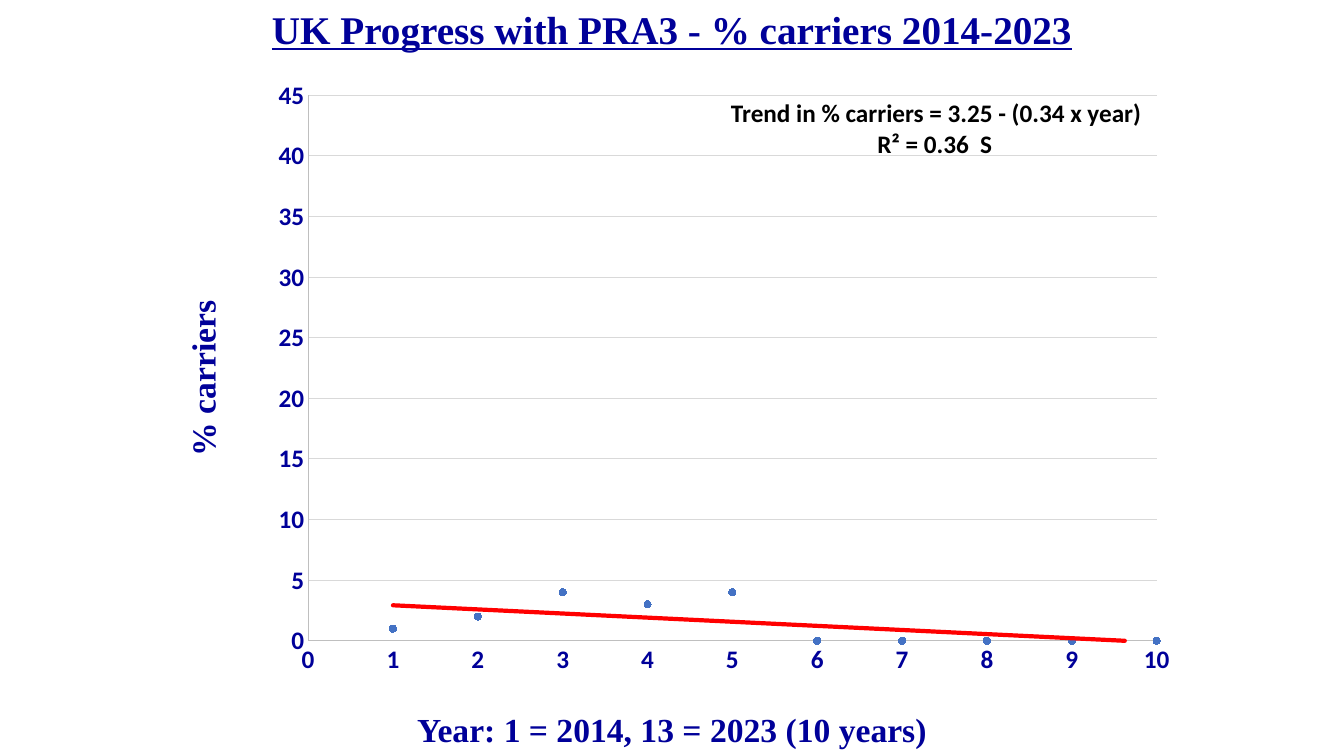
from dataclasses import dataclass

from lxml import etree
from pptx import Presentation
from pptx import util as u
from pptx.chart.data import XyChartData
from pptx.dml.color import RGBColor
from pptx.enum import chart as ch, text
from pptx.oxml import parse_xml
from pptx.oxml.ns import nsdecls, qn


@dataclass(frozen=True)
class Theme:
    navy: str = "000099"
    black: str = "000000"
    marker: str = "4472C4"
    trend: str = "FF0000"
    axis: str = "BFBFBF"
    grid: str = "D9D9D9"
    serif: str = "Times New Roman"
    sans: str = "Calibri"
    title: int = 28
    label: int = 24
    small: int = 18


class Deck:
    def __init__(self, theme, width, height):
        self.theme = theme
        self.prs = Presentation()
        self.prs.slide_width, self.prs.slide_height = u.Cm(width), u.Cm(height)
        self.s = self.prs.slides.add_slide(self.prs.slide_layouts[5])

    def font(self, font, name, size, color):
        font.name, font.size, font.bold = name, u.Pt(size), True
        font.color.rgb = RGBColor.from_string(color)

    def fill_text(self, sp, lines, name, size, color):
        tf = sp.text_frame
        tf.text = "\n".join(lines)
        tf.word_wrap = True
        tf.auto_size = text.MSO_AUTO_SIZE.NONE
        tf.vertical_anchor = text.MSO_ANCHOR.TOP
        for p in tf.paragraphs:
            p.alignment = text.PP_ALIGN.CENTER
            for r in p.runs:
                self.font(r.font, name, size, color)
        return tf

    def title(self, line, x, y, w, h):
        sp = self.s.shapes.title
        sp.left, sp.top, sp.width, sp.height = map(u.Cm, (x, y, w, h))
        t = self.theme
        tf = self.fill_text(sp, [line], t.serif, t.title, t.navy)
        tf.paragraphs[0].runs[0].font.underline = True

    def label(self, line, x, y, w, h, rotation=0):
        sp = self.s.shapes.add_textbox(*map(u.Cm, (x, y, w, h)))
        sp.rotation = rotation
        t = self.theme
        self.fill_text(sp, [line], t.serif, t.label, t.navy)

    def equation(self, lines, x, y, w, h):
        sp = self.s.shapes.add_textbox(*map(u.Cm, (x, y, w, h)))
        t = self.theme
        tf = self.fill_text(sp, lines, t.sans, t.small, t.black)
        tf.paragraphs[0].alignment = text.PP_ALIGN.RIGHT

    def line(self, fmt, color):
        fmt.color.rgb = RGBColor.from_string(color)
        fmt.width = u.Pt(0.75)

    def axis(self, axis, maximum, step):
        t = self.theme
        axis.minimum_scale, axis.maximum_scale, axis.major_unit = 0, maximum, step
        axis.has_title = False
        axis.major_tick_mark = axis.minor_tick_mark = ch.XL_TICK_MARK.NONE
        axis.tick_labels.number_format = "General"
        axis.tick_labels.number_format_is_linked = False
        self.font(axis.tick_labels.font, t.sans, t.small, t.navy)
        self.line(axis.format.line, t.axis)

    def trend_line(self, series):
        trend = parse_xml(
            f'<c:trendline {nsdecls("c", "a")}><c:spPr><a:ln w="38100" cap="rnd">'
            f'<a:solidFill><a:srgbClr val="{self.theme.trend}"/></a:solidFill>'
            '</a:ln></c:spPr><c:trendlineType val="linear"/>'
            '<c:dispRSqr val="0"/><c:dispEq val="0"/></c:trendline>')
        series._element.find(qn("c:xVal")).addprevious(trend)

    def plot_layout(self, chart, **edges):
        area = chart.element.find(".//" + qn("c:plotArea"))
        for old in area.findall(qn("c:layout")):
            area.remove(old)
        layout = parse_xml(f'<c:layout {nsdecls("c")}><c:manualLayout/></c:layout>')
        values = dict(layoutTarget="inner", xMode="edge", yMode="edge", **edges)
        for key, value in values.items():
            etree.SubElement(layout[0], qn("c:" + key)).set("val", str(value))
        area.insert(0, layout)

    def scatter(self, name, points, x, y, w, h):
        t = self.theme
        data = XyChartData()
        series = data.add_series(name)
        for year, share in points:
            series.add_data_point(year, share)
        chart = self.s.shapes.add_chart(
            ch.XL_CHART_TYPE.XY_SCATTER, *map(u.Cm, (x, y, w, h)), data).chart
        chart.has_title = chart.has_legend = False
        chart.font.name, chart.font.size = t.sans, u.Pt(10)
        self.axis(chart.category_axis, 10, 1)
        self.axis(chart.value_axis, 45, 5)
        chart.category_axis.has_major_gridlines = False
        self.line(chart.value_axis.major_gridlines.format.line, t.grid)
        plot = chart.plots[0]
        plot.vary_by_categories = False
        series = plot.series[0]
        series.smooth = False
        series.format.line.fill.background()
        series.marker.style, series.marker.size = ch.XL_MARKER_STYLE.CIRCLE, 5
        fmt = series.marker.format
        fmt.fill.solid()
        fmt.fill.fore_color.rgb = RGBColor.from_string(t.marker)
        self.line(fmt.line, t.marker)
        self.trend_line(series)
        self.plot_layout(chart, x=0.07, y=0.03, w=0.91, h=0.87)


def main():
    deck = Deck(Theme(), 33.87, 19.05)
    carriers = [1, 2, 4, 3, 4, 0, 0, 0, 0, 0]
    deck.scatter("Series 1", enumerate(carriers, 1), 6.12, 1.93, 23.5, 15.8)
    deck.title("UK Progress with PRA3 - % carriers 2014-2023", 4.23, 0, 25.4, 1.45)
    deck.label("Year: 1 = 2014, 13 = 2023 (10 years)", 4.23, 17.73, 25.4, 1.28)
    deck.label("% carriers", -1.6, 8.9, 13.4, 1.28, rotation=270)
    deck.equation(["Trend in % carriers = 3.25 - (0.34 x year)", "R² = 0.36  S"],
                  18.1, 2.34, 10.92, 1.8)
    deck.prs.save("out.pptx")


if __name__ == "__main__":
    main()
